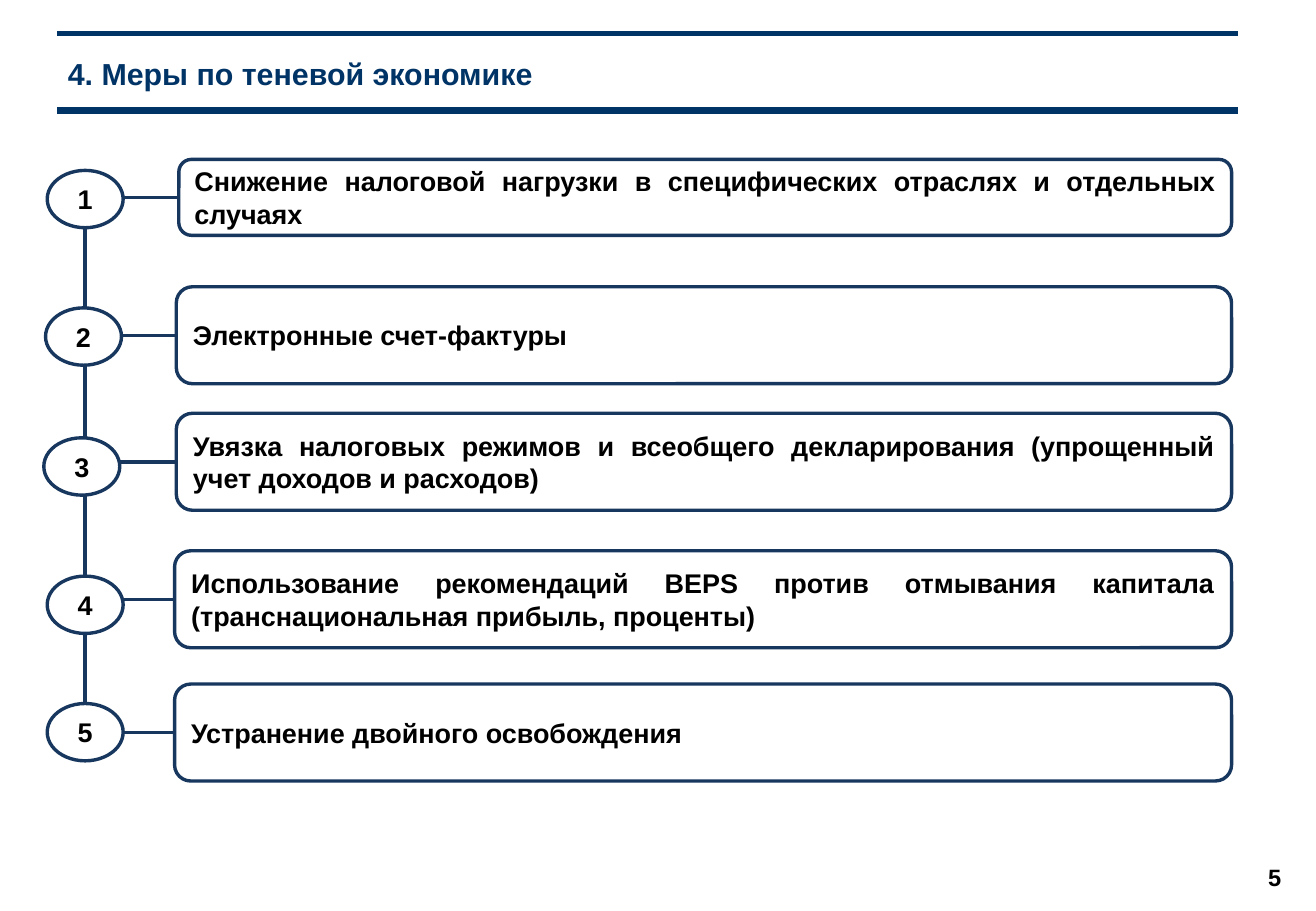
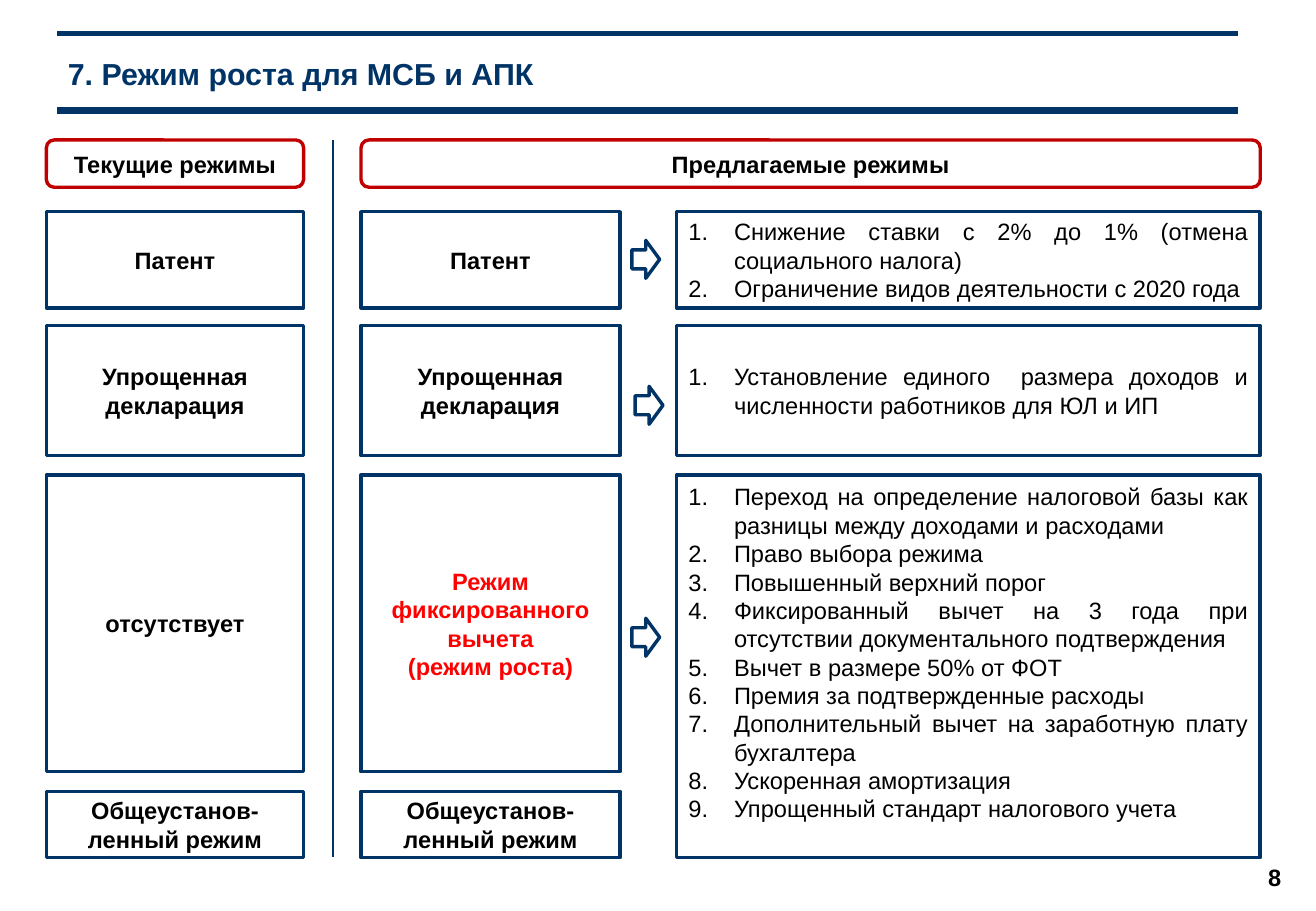
from lxml import etree
from pptx import Presentation
from pptx.dml.color import RGBColor
from pptx.enum import shapes, text
from pptx.oxml import ns
from pptx.util import Pt

NAVY = RGBColor(0x00, 0x33, 0x66)
STEEL = RGBColor(0x17, 0x37, 0x5E)
CRIMSON = RGBColor(0xC0, 0x00, 0x00)
RED = RGBColor(0xFF, 0x00, 0x00)
BLACK = RGBColor(0x00, 0x00, 0x00)
WHITE = RGBColor(0xFF, 0xFF, 0xFF)

FONT = "Arial"
SHAPE = shapes.MSO_SHAPE
ALIGN = text.PP_ALIGN
MIDDLE = text.MSO_ANCHOR.MIDDLE


# Basic parts
def write(tf, lines, size, color=BLACK, bold=True, align=ALIGN.CENTER, numbered=False):
    tf.word_wrap = True
    tf.vertical_anchor = MIDDLE
    for i, line in enumerate(lines):
        p = tf.add_paragraph() if i else tf.paragraphs[0]
        p.alignment = align
        if numbered:
            number(p)
        r = p.add_run()
        r.text = line
        f = r.font
        f.name, f.size, f.bold = FONT, Pt(size), bold
        f.color.rgb = color


def number(p, indent=27):
    pPr = p._p.get_or_add_pPr()
    pPr.set("marL", str(Pt(indent)))
    pPr.set("indent", str(-Pt(indent)))
    etree.SubElement(pPr, ns.qn("a:buFont"), typeface=FONT)
    etree.SubElement(pPr, ns.qn("a:buAutoNum"), type="arabicPeriod")


def add_box(s, kind, box, line=NAVY):
    sp = s.shapes.add_shape(kind, *map(Pt, box))
    sp.shadow.inherit = False
    sp.fill.solid()
    sp.fill.fore_color.rgb = WHITE
    if line is None:
        sp.line.fill.background()
    else:
        sp.line.color.rgb = line
        sp.line.width = Pt(2)
    return sp


def add_line(s, x1, y1, x2, y2, color, width):
    c = s.shapes.add_connector(shapes.MSO_CONNECTOR.STRAIGHT, *map(Pt, (x1, y1, x2, y2)))
    c.line.color.rgb = color
    c.line.width = Pt(width)
    etree.SubElement(c.element.spPr, ns.qn("a:effectLst"))
    return c


# Title, bands and page number shared by all slides
def new_slide(prs, title, page):
    s = prs.slides.add_slide(prs.slide_layouts[5])
    for y, width in ((65.5, 4.5), (20, 3)):
        add_line(s, 34, y, 734, y, NAVY, width)
    sp = add_box(s, SHAPE.RECTANGLE, (732, 500, 47, 40), None)
    write(sp.text_frame, [page], 14)
    t = s.shapes.title
    t.left, t.top, t.width, t.height = map(Pt, (33, 21, 703, 45))
    write(t.text_frame, [title], 18, NAVY, align=ALIGN.LEFT)
    return s


# Numbered circles on a vertical line, each linked to its measure
def measure_chain(s, x, y, w, measures):
    cw, ch = 45, 34
    first, last = measures[0][0], measures[-1][0]
    add_line(s, x + 24.5, y + first[1] + ch, x + 24.5, y + last[1], STEEL, 2)
    for i, ((cx, cy), (bx, by, bh), label) in enumerate(measures, 1):
        box = add_box(s, SHAPE.ROUNDED_RECTANGLE, (x + bx, y + by, w - bx, bh), STEEL)
        write(box.text_frame, [label], 16, align=ALIGN.JUSTIFY)
        circle = add_box(s, SHAPE.OVAL, (x + cx, y + cy, cw, ch), STEEL)
        write(circle.text_frame, [str(i)], 16)
        mid = y + by + bh / 2
        link = add_line(s, x + cx + cw, mid, x + bx, mid, STEEL, 2)
        link.end_connect(box, 1)


# Header above a group of columns
def header(s, x, y, w, label):
    sp = add_box(s, SHAPE.ROUNDED_RECTANGLE, (x, y, w, 28), CRIMSON)
    write(sp.text_frame, [label], 14)


# Column of regimes: rows of (top, height)
def regime_column(s, x, y, w, rows, regimes):
    for (top, h), (lines, color) in zip(rows, regimes):
        sp = add_box(s, SHAPE.RECTANGLE, (x, y + top, w, h))
        write(sp.text_frame, lines, 14, color)


# Numbered proposals, each with an arrow before it
def proposal_column(s, x, y, w, proposals):
    for top, h, pad, (ax, ay), lines in proposals:
        sp = add_box(s, SHAPE.RECTANGLE, (x, y + top, w, h))
        write(sp.text_frame, lines, 14, bold=False, align=ALIGN.JUSTIFY, numbered=True)
        sp.text_frame.margin_bottom = Pt(pad)
        add_box(s, SHAPE.RIGHT_ARROW, (x + ax, y + ay, 16.5, 22.5))


def shadow_economy_slide(prs):
    s = new_slide(prs, "4. Меры по теневой экономике", "5")
    # Circle offset, box offset and height, wording
    measure_chain(s, 26, 94.5, 704, [
        ((2, 6.5), (80, 0, 45),
         "Снижение налоговой нагрузки в специфических отраслях и отдельных случаях"),
        ((1, 88), (78.5, 75.5, 57.5), "Электронные счет-фактуры"),
        ((0, 165), (78.5, 150.5, 57.5),
         "Увязка налоговых режимов и всеобщего декларирования (упрощенный учет доходов и расходов)"),
        ((2, 247), (77.5, 232, 57.5),
         "Использование рекомендаций BEPS против отмывания капитала "
         "(транснациональная прибыль, проценты)"),
        ((2, 322.5), (77.5, 311, 57.5), "Устранение двойного освобождения"),
    ])


def growth_regime_slide(prs):
    s = new_slide(prs, "7. Режим роста для МСБ и АПК", "8")
    current, proposed, details, top = 27.5, 214, 401, 83
    rows = [(42.5, 57), (110, 77), (198.5, 176), (386, 39.5)]
    patent = (["Патент"], BLACK)
    simplified = (["Упрощенная декларация"], BLACK)
    general = (["Общеустанов-ленный режим"], BLACK)
    header(s, current, top, 152.5, "Текущие режимы")
    header(s, proposed, top, 533, "Предлагаемые режимы")
    regime_column(s, current, top, 152.5, rows,
                  [patent, simplified, (["отсутствует"], BLACK), general])
    regime_column(s, proposed, top, 153.5, rows,
                  [patent, simplified,
                   (["Режим фиксированного вычета", "(режим роста)"], RED), general])
    # Top, height, bottom margin, arrow offset, items
    proposal_column(s, details, top, 346, [
        (*rows[0], 3.6, (-26.5, 59.5), [
            "Снижение ставки с 2% до 1% (отмена социального налога)",
            "Ограничение видов деятельности с 2020 года"]),
        (*rows[1], 3.6, (-24.5, 146), [
            "Установление единого  размера доходов и численности работников для ЮЛ и ИП"]),
        (rows[2][0], 227, 20, (-26.5, 283.5), [
            "Переход на определение налоговой базы как разницы между доходами и расходами",
            "Право выбора режима",
            "Повышенный верхний порог",
            "Фиксированный вычет на 3 года при отсутствии документального подтверждения",
            "Вычет в размере 50% от ФОТ",
            "Премия за подтвержденные расходы",
            "Дополнительный вычет на заработную плату бухгалтера",
            "Ускоренная амортизация",
            "Упрощенный стандарт налогового учета"]),
    ])
    # Divider between current and proposed regimes
    add_line(s, 197.5, top, 197.5, top + 425, NAVY, 1.5)


def main():
    prs = Presentation()
    prs.slide_width, prs.slide_height = Pt(780), Pt(540)
    shadow_economy_slide(prs)
    growth_regime_slide(prs)
    prs.save("out.pptx")


if __name__ == "__main__":
    main()
